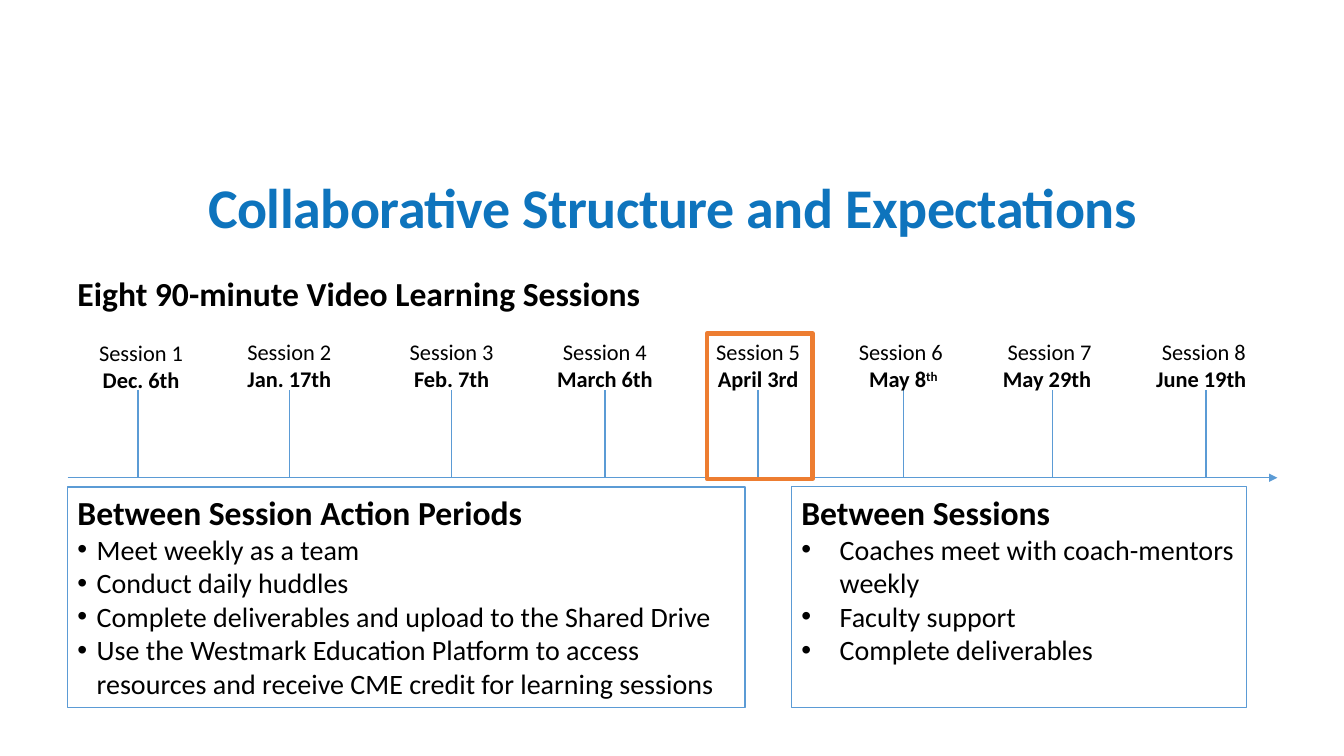
from dataclasses import dataclass

from lxml.etree import SubElement
from pptx import Presentation
from pptx.dml.color import RGBColor
from pptx.enum.shapes import MSO_CONNECTOR as Connector, MSO_SHAPE as Preset
from pptx.enum.text import MSO_ANCHOR as Anchor, PP_ALIGN as Align
from pptx.oxml.ns import qn
from pptx.util import Inches, Pt

COLORS = {"title": "0E74BD", "text": "000000", "line": "5B9BD5", "highlight": "ED7D31"}
FONT = "Calibri"
LABEL_TOP, LABEL_WIDTH, LABEL_HEIGHT = 3.31, 1.16, 0.64
TICK_TOP, AXIS_TOP = 3.87, 4.74
PANEL_TOP, PANEL_HEIGHT = 4.83, 2.19
LEFT = 0.67


@dataclass
class Session:
    name: str
    date: str
    tick: float
    center: float
    suffix: str = ""
    top: float = LABEL_TOP


@dataclass
class Panel:
    heading: str
    items: list[str]
    left: float
    width: float
    indent: float
    line_width: float


SESSIONS = [
    Session("Session 1", "Dec. 6th", 1.37, 1.4, top=3.32),
    Session("Session 2", "Jan. 17th", 2.87, 2.87),
    Session("Session 3", "Feb. 7th", 4.48, 4.48),
    Session("Session 4", "March 6th", 6, 6),
    Session("Session 5", "April 3rd", 7.52, 7.52),
    Session("Session 6 ", "May 8", 8.96, 8.96, suffix="th"),
    Session("Session 7", "May 29th ", 10.44, 10.41),
    Session("Session 8", "June 19th ", 11.96, 11.94),
]

PANELS = [
    Panel("Between Session Action Periods", [
        "Meet weekly as a team",
        "Conduct daily huddles",
        "Complete deliverables and upload to the Shared Drive",
        "Use the Westmark Education Platform to access resources "
        "and receive CME credit for learning sessions",
    ], LEFT, 6.72, 0.19, 1),
    Panel("Between Sessions", [
        "Coaches meet with coach-mentors weekly",
        "Faculty support",
        "Complete deliverables",
    ], 7.85, 4.51, 0.38, 0.75),
]


def color(name: str) -> RGBColor:
    return RGBColor.from_string(COLORS[name])


def add_run(paragraph, text: str, *, size: float, bold: bool = False,
            fill: str = "text", spacing: int = 0, baseline: int = 0) -> None:
    run = paragraph.add_run()
    run.text = text
    font = run.font
    font.name, font.size, font.bold = FONT, Pt(size), bold
    font.color.rgb = color(fill)
    properties = run._r.get_or_add_rPr()
    if spacing:
        properties.set("spc", str(spacing))
    if baseline:
        properties.set("baseline", str(baseline))


def add_text_box(slide, left: float, top: float, width: float, height: float,
                 wrap: bool = True):
    box = slide.shapes.add_textbox(Inches(left), Inches(top), Inches(width), Inches(height))
    box.text_frame.word_wrap = wrap
    return box.text_frame


def add_line(slide, start: tuple[float, float], end: tuple[float, float],
             arrow: bool = False) -> None:
    points = [Inches(value) for value in (*start, *end)]
    connector = slide.shapes.add_connector(Connector.STRAIGHT, *points)
    connector.line.color.rgb = color("line")
    connector.line.width = Pt(1)
    if arrow:
        SubElement(connector.line._get_or_add_ln(), qn("a:tailEnd"), type="triangle")
    SubElement(connector._element.spPr, qn("a:effectLst"))


def add_frame(slide, left: float, top: float, width: float, height: float,
              line_color: str, line_width: float):
    shape = slide.shapes.add_shape(
        Preset.RECTANGLE, Inches(left), Inches(top), Inches(width), Inches(height))
    shape.shadow.inherit = False
    shape.fill.background()
    shape.line.color.rgb = color(line_color)
    shape.line.width = Pt(line_width)
    return shape


def add_bullet(paragraph, indent: float) -> None:
    properties = paragraph._p.get_or_add_pPr()
    properties.set("marL", str(Inches(indent)))
    properties.set("indent", str(-Inches(indent)))
    SubElement(properties, qn("a:buFont"), typeface="Arial")
    SubElement(properties, qn("a:buChar"), char="•")


def add_session(slide, session: Session) -> None:
    add_line(slide, (session.tick, TICK_TOP), (session.tick, AXIS_TOP))
    frame = add_text_box(slide, session.center - LABEL_WIDTH / 2, session.top,
                         LABEL_WIDTH, LABEL_HEIGHT, wrap=False)
    name, date = frame.paragraphs[0], frame.add_paragraph()
    name.alignment = date.alignment = Align.CENTER
    add_run(name, session.name, size=16)
    add_run(date, session.date, size=16, bold=True)
    if session.suffix:
        add_run(date, session.suffix, size=16, bold=True, baseline=30000)


def add_panel(slide, panel: Panel) -> None:
    shape = add_frame(slide, panel.left, PANEL_TOP, panel.width, PANEL_HEIGHT,
                      "line", panel.line_width)
    frame = shape.text_frame
    frame.word_wrap = True
    frame.vertical_anchor = Anchor.TOP
    heading = frame.paragraphs[0]
    heading.alignment = Align.LEFT
    add_run(heading, panel.heading, size=24, bold=True)
    for item in panel.items:
        paragraph = frame.add_paragraph()
        paragraph.alignment = Align.LEFT
        add_bullet(paragraph, panel.indent)
        add_run(paragraph, item, size=20)


def main() -> None:
    presentation = Presentation()
    presentation.slide_width = Inches(13.33)
    presentation.slide_height = Inches(7.5)
    slide = presentation.slides.add_slide(presentation.slide_layouts[6])

    title = add_text_box(slide, LEFT, 1.74, 12, 0.79).paragraphs[0]
    title.alignment = Align.CENTER
    title.line_spacing = 0.9
    add_run(title, "Collaborative Structure and Expectations", size=40, bold=True,
            fill="title", spacing=-30)

    subtitle = add_text_box(slide, LEFT, 2.66, 6.19, 0.5).paragraphs[0]
    add_run(subtitle, "Eight 90-minute Video Learning Sessions", size=24, bold=True)

    add_line(slide, (LEFT, AXIS_TOP), (12.67, AXIS_TOP), arrow=True)
    for session in SESSIONS:
        add_session(slide, session)
    for panel in PANELS:
        add_panel(slide, panel)
    add_frame(slide, 7.01, LABEL_TOP, 1.05, 1.44, "highlight", 3)

    presentation.save("out.pptx")


if __name__ == "__main__":
    main()
